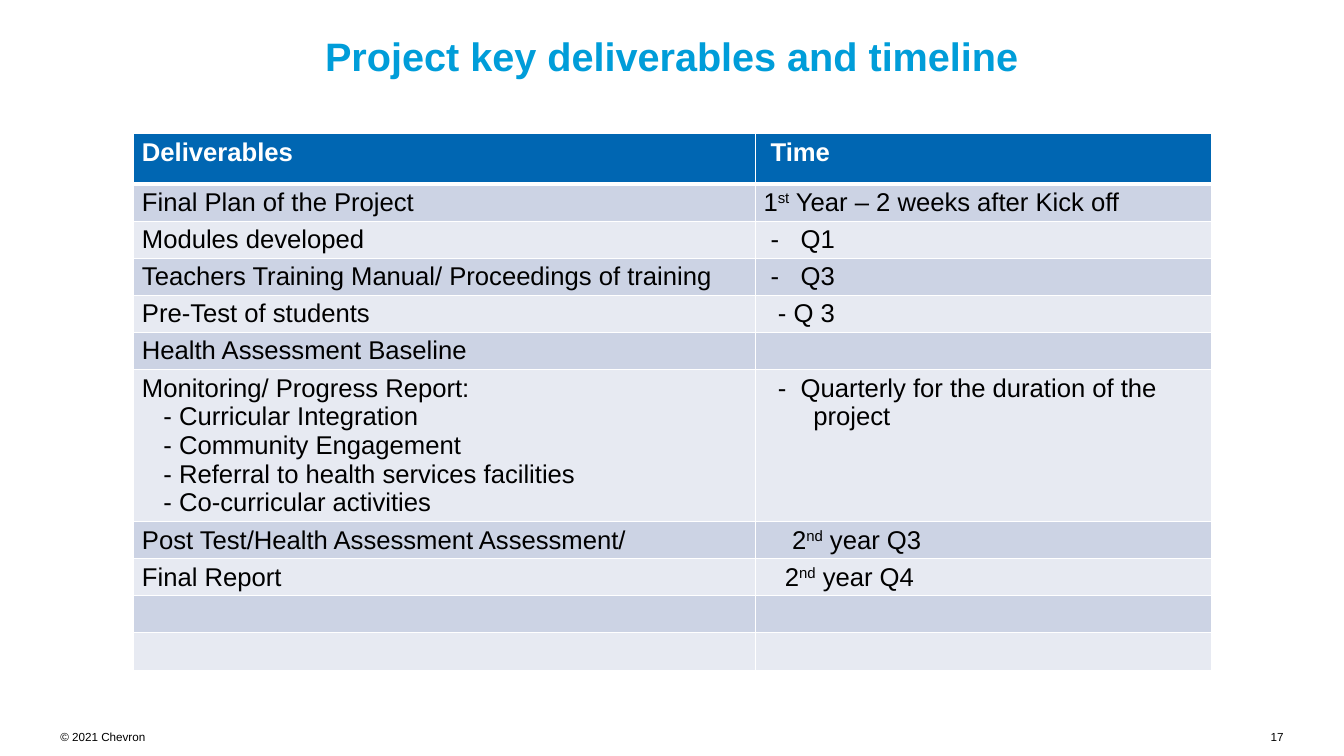
from dataclasses import dataclass

from lxml.etree import SubElement
from pptx import Presentation
from pptx.dml.color import RGBColor
from pptx.enum.text import MSO_ANCHOR as Anchor, MSO_AUTO_SIZE as AutoSize, PP_ALIGN as Align
from pptx.oxml.ns import qn
from pptx.util import Pt

COLORS = {
    "title": "009DD9",
    "header": "0066B2",
    "odd_row": "CCD3E4",
    "even_row": "E7EAF2",
    "white": "FFFFFF",
    "black": "000000",
}
FONT = "Arial"
TABLE_SIZE = 22
HEADER_HEIGHT, LINE_HEIGHT, ROW_PADDING = 43.2, 24.6, 7.2
COLUMN_WIDTHS = (532.8, 391)


@dataclass(frozen=True)
class Line:
    """A cell paragraph; text between carets is superscript."""
    text: str
    left: float = 0
    dash_at: float | None = None


@dataclass(frozen=True)
class Row:
    deliverable: tuple[Line, ...] = ()
    time: tuple[Line, ...] = ()


@dataclass(frozen=True)
class FooterText:
    text: str
    left: float
    width: float
    align: Align


REPORT_PARTS = (
    "Curricular Integration",
    "Community Engagement",
    "Referral to health services facilities",
    "Co-curricular activities",
)
ROWS = (
    Row((Line("Deliverables"),), (Line("Time", 6.1),)),
    Row((Line("Final Plan of the Project"),), (Line("1^st^ Year – 2 weeks after Kick off"),)),
    Row((Line("Modules developed"),), (Line("Q1", 31.8, 6.1),)),
    Row((Line("Teachers Training Manual/ Proceedings of training"),), (Line("Q3", 31.8, 6.1),)),
    Row((Line("Pre-Test of students"),), (Line("Q 3", 25.7, 12.2),)),
    Row((Line("Health Assessment Baseline"),)),
    Row(
        (Line("Monitoring/ Progress Report:"), *(Line(part, 31.8, 18.3) for part in REPORT_PARTS)),
        (Line("Quarterly for the duration of the", 31.8, 12.2), Line("project", 42.8)),
    ),
    Row((Line("Post Test/Health Assessment Assessment/"),), (Line("2^nd^ year Q3", 24.5),)),
    Row((Line("Final Report"),), (Line("2^nd^ year Q4", 18.3),)),
    Row(),
    Row(),
)
FOOTERS = (
    FooterText("© 2021 Chevron", 51.8, 73.4, Align.LEFT),
    FooterText("17", 998.6, 101.5, Align.RIGHT),
)


def rgb(name: str) -> RGBColor:
    return RGBColor.from_string(COLORS[name])


def format_runs(paragraph, size: float, color: str, bold: bool = False) -> None:
    for run in paragraph.runs:
        run.font.name = FONT
        run.font.size = Pt(size)
        run.font.bold = bold
        run.font.color.rgb = rgb(color)


def set_indent(paragraph, line: Line) -> None:
    properties = paragraph._p.get_or_add_pPr()
    first_line = 0 if line.dash_at is None else line.dash_at - line.left
    properties.set("marL", str(Pt(line.left)))
    properties.set("indent", str(Pt(first_line)))
    if line.dash_at is not None:
        SubElement(properties, qn("a:buFont"), typeface=FONT)
        SubElement(properties, qn("a:buChar"), char="-")


def write_line(paragraph, line: Line, color: str, bold: bool) -> None:
    set_indent(paragraph, line)
    first, *others = line.text.split("^")
    paragraph.text = first
    for number, part in enumerate(others):
        run = paragraph.add_run()
        run.text = part
        if number % 2 == 0:
            run._r.get_or_add_rPr().set("baseline", "30000")
    format_runs(paragraph, TABLE_SIZE, color, bold)


def add_borders(cell, top: float, bottom: float) -> None:
    properties = cell._tc.get_or_add_tcPr()
    for side, width in (("L", 1), ("R", 1), ("T", top), ("B", bottom)):
        border = SubElement(properties, qn(f"a:ln{side}"), w=str(Pt(width)))
        fill = SubElement(border, qn("a:solidFill"))
        SubElement(fill, qn("a:srgbClr"), val=COLORS["white"])


def fill_cell(cell, lines: tuple[Line, ...], row_index: int) -> None:
    is_header = row_index == 0
    add_borders(cell, top=3 if row_index == 1 else 1, bottom=3 if is_header else 1)
    cell.fill.solid()
    band = "odd_row" if row_index % 2 else "even_row"
    cell.fill.fore_color.rgb = rgb("header" if is_header else band)
    cell.text_frame.text = "\n".join(line.text for line in lines)
    for paragraph, line in zip(cell.text_frame.paragraphs, lines):
        write_line(paragraph, line, "white" if is_header else "black", is_header)


def add_deliverables_table(slide) -> None:
    heights = [HEADER_HEIGHT] + [
        ROW_PADDING + LINE_HEIGHT * max(1, len(row.deliverable)) for row in ROWS[1:]
    ]
    table = slide.shapes.add_table(
        len(ROWS), len(COLUMN_WIDTHS),
        Pt(114.5), Pt(114.5), Pt(sum(COLUMN_WIDTHS)), Pt(sum(heights)),
    ).table
    for column, width in zip(table.columns, COLUMN_WIDTHS):
        column.width = Pt(width)
    for index, (row, height) in enumerate(zip(ROWS, heights)):
        table.rows[index].height = Pt(height)
        for column_index, lines in enumerate((row.deliverable, row.time)):
            fill_cell(table.cell(index, column_index), lines, index)


def add_title(slide) -> None:
    title = slide.shapes.title
    title.left, title.top, title.width, title.height = Pt(51.8), Pt(23), Pt(1048.3), Pt(81.4)
    frame = title.text_frame
    frame.margin_left = frame.margin_right = 0
    frame.margin_top = frame.margin_bottom = Pt(4.3)
    frame.vertical_anchor = Anchor.TOP
    frame.auto_size = AutoSize.NONE
    frame.text = "Project key deliverables and timeline"
    paragraph = frame.paragraphs[0]
    paragraph.alignment = Align.CENTER
    format_runs(paragraph, 34, "title", bold=True)


def add_footer(slide, footer: FooterText) -> None:
    box = slide.shapes.add_textbox(Pt(footer.left), Pt(625.7), Pt(footer.width), Pt(12))
    frame = box.text_frame
    frame.word_wrap = True
    frame.margin_left = frame.margin_right = frame.margin_top = frame.margin_bottom = 0
    frame.text = footer.text
    paragraph = frame.paragraphs[0]
    paragraph.alignment = footer.align
    format_runs(paragraph, 10, "black")


def main() -> None:
    presentation = Presentation()
    presentation.slide_width, presentation.slide_height = Pt(1152), Pt(648)
    slide = presentation.slides.add_slide(presentation.slide_layouts[5])
    add_title(slide)
    add_deliverables_table(slide)
    for footer in FOOTERS:
        add_footer(slide, footer)
    presentation.save("out.pptx")


if __name__ == "__main__":
    main()
